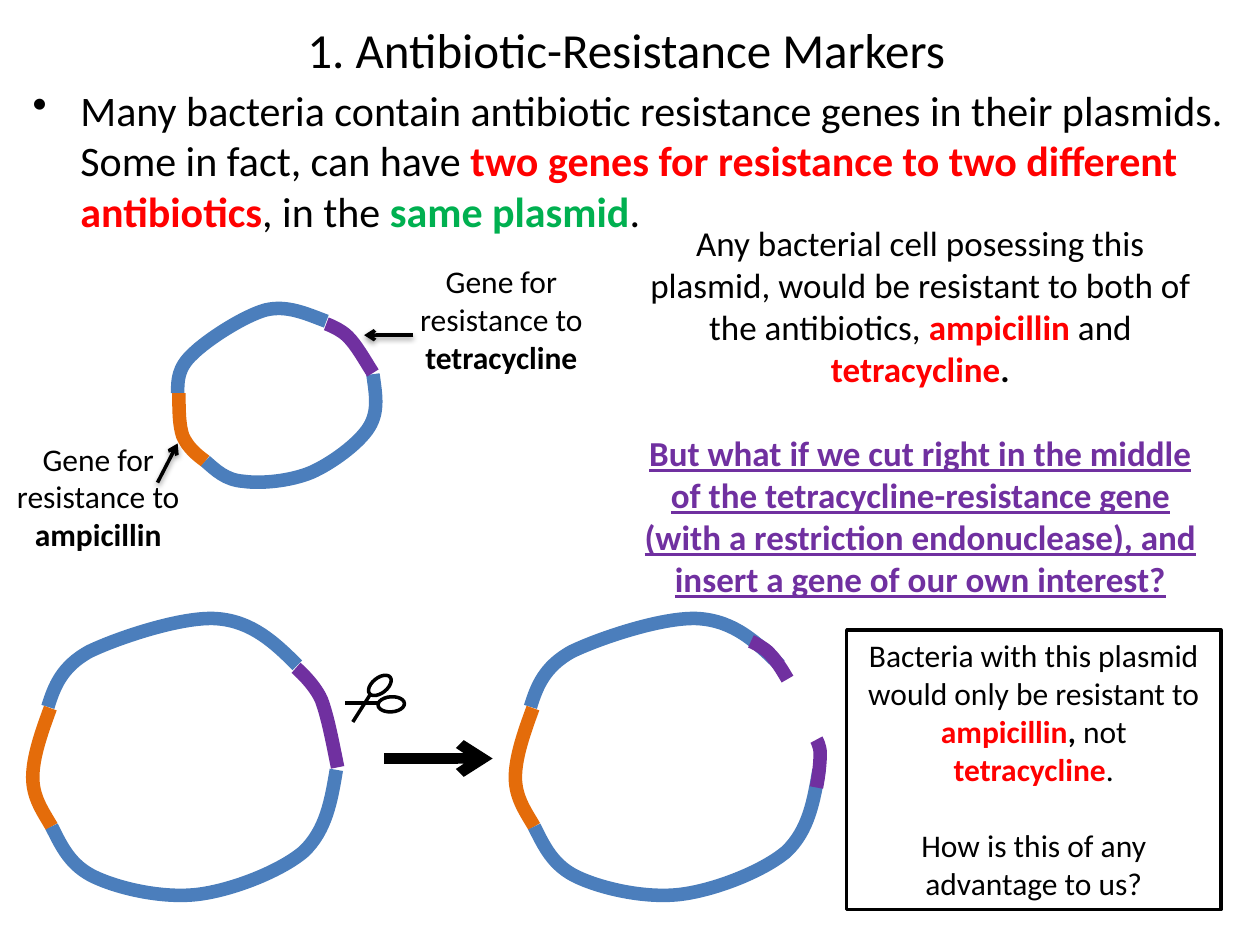
import pptx
import pptx.dml.color
import pptx.enum.shapes
import pptx.enum.text
import pptx.oxml
import pptx.oxml.ns
import pptx.util
from lxml import etree
from pptx.util import Inches

BLACK, WHITE, RED, GREEN = "000000", "FFFFFF", "FF0000", "00B050"
BLUE, ORANGE, PURPLE = "4B7EBC", "E46C0A", "7030A0"
color = pptx.dml.color.RGBColor.from_string
qn = pptx.oxml.ns.qn
CENTER = pptx.enum.text.PP_ALIGN.CENTER
STRAIGHT = pptx.enum.shapes.MSO_CONNECTOR.STRAIGHT
SHAPE = pptx.enum.shapes.MSO_SHAPE


def write_text(shape, size, paragraphs, gap=0, align=CENTER):
    """Fill a shape with paragraphs of (text, colour, bold) runs; gap is in points."""
    frame = shape.text_frame
    frame.word_wrap = True
    for index, runs in enumerate(paragraphs):
        paragraph = frame.add_paragraph() if index else frame.paragraphs[0]
        paragraph.alignment = align
        paragraph.space_before = pptx.util.Pt(gap if index else 0)
        paragraph.font.name = "Calibri"
        paragraph.font.size = pptx.util.Pt(size)
        for text, run_color, bold in runs:
            run = paragraph.add_run()
            run.text = text
            run.font.color.rgb = color(run_color)
            run.font.bold = bold
    return frame


def draw_arc(shapes, line_color, points, shift=0):
    """Draw a start point followed by triples of Bezier points, moved right by shift."""
    points = [(Inches(x + shift), Inches(y)) for x, y in points]
    builder = shapes.build_freeform(*points[0])
    builder.add_line_segments(points[1:], close=False)
    arc = builder.convert_to_shape()
    arc.shadow.inherit = False
    arc.fill.background()
    arc.line.color.rgb = color(line_color)
    arc.line.width = pptx.util.Pt(7.75)
    outline = arc._element.find(".//" + qn("a:path"))
    segments = outline.findall(qn("a:lnTo"))
    for first in range(0, len(segments), 3):
        curve = etree.SubElement(outline, qn("a:cubicBezTo"))
        for segment in segments[first:first + 3]:
            curve.append(segment[0])
            outline.remove(segment)


presentation = pptx.Presentation()
presentation.slide_width = Inches(10)
presentation.slide_height = Inches(7.5)
slide = presentation.slides.add_slide(presentation.slide_layouts[6])
shapes = slide.shapes

# Title and bullet
title = shapes.add_textbox(Inches(0.47), Inches(0.23), Inches(9), Inches(0.32))
frame = write_text(title, 28, [[("1. Antibiotic-Resistance Markers", BLACK, False)]])
frame.vertical_anchor = pptx.enum.text.MSO_ANCHOR.MIDDLE

body = shapes.add_textbox(Inches(0.16), Inches(0.62), Inches(9.69), Inches(6.88))
frame = write_text(body, 24, [[
    ("Many bacteria contain antibiotic resistance genes in their plasmids. "
     "Some in fact, can have ", BLACK, False),
    ("two genes for resistance to two different antibiotics", RED, True),
    (", in the ", BLACK, False),
    ("same plasmid", GREEN, True),
    (".", BLACK, False),
]], align=pptx.enum.text.PP_ALIGN.LEFT)
properties = frame.paragraphs[0]._p.get_or_add_pPr()
properties.set("marL", str(Inches(0.38)))
properties.set("indent", str(Inches(-0.38)))
bullet = pptx.oxml.parse_xml(
    f'<a:buChar {pptx.oxml.ns.nsdecls("a")} char="•"/>')
properties.find(qn("a:defRPr")).addprevious(bullet)

# Small plasmid with both resistance genes
small_plasmid = [
    (BLUE, [(2.59, 2.55), (2.43, 2.49), (2.28, 2.42), (2.11, 2.46),
            (1.93, 2.51), (1.64, 2.7), (1.53, 2.81),
            (1.41, 2.92), (1.41, 3.02), (1.41, 3.12)]),
    (ORANGE, [(1.42, 3.12), (1.42, 3.25), (1.42, 3.37), (1.45, 3.46),
              (1.49, 3.55), (1.56, 3.61), (1.63, 3.66)]),
    (BLUE, [(1.63, 3.66), (1.71, 3.73), (1.79, 3.81), (1.93, 3.82),
            (2.07, 3.84), (2.3, 3.82), (2.47, 3.75),
            (2.63, 3.68), (2.85, 3.52), (2.93, 3.39),
            (3.01, 3.26), (2.98, 3.12), (2.96, 2.97)]),
    (PURPLE, [(2.96, 2.96), (2.89, 2.85), (2.83, 2.74), (2.76, 2.67),
              (2.7, 2.61), (2.59, 2.57), (2.59, 2.57)]),
]
for arc_color, points in small_plasmid:
    draw_arc(shapes, arc_color, points)

for left, top, antibiotic in [(0, 3.44, "ampicillin"), (3.2, 2.03, "tetracycline")]:
    label = shapes.add_textbox(Inches(left), Inches(top), Inches(1.56), Inches(1.01))
    write_text(label, 18, [[("Gene for resistance to ", BLACK, False),
                            (antibiotic, BLACK, True)]])

# Explanation and question
explanation = shapes.add_textbox(Inches(4.92), Inches(1.71), Inches(4.77), Inches(3.13))
frame = write_text(explanation, 20, [
    [("Any bacterial cell posessing this plasmid, would be resistant to both "
      "of the antibiotics, ", BLACK, False),
     ("ampicillin", RED, True), (" and ", BLACK, False),
     ("tetracycline", RED, True), (".", BLACK, True)],
    [("But what if we cut right in the middle of the tetracycline-resistance gene "
      "(with a restriction endonuclease), and insert a gene of our own interest?",
      PURPLE, True)],
], gap=24)
frame.paragraphs[1].font.underline = True

# Large plasmid, whole on the left and cut on the right
large_plasmid = [
    (BLUE, [(2.36, 5.28), (2.18, 5.1), (2, 4.93), (1.72, 4.91),
            (1.45, 4.89), (0.94, 5.06), (0.71, 5.17),
            (0.49, 5.29), (0.43, 5.45), (0.38, 5.61)]),
    (ORANGE, [(0.4, 5.62), (0.33, 5.81), (0.26, 6.01), (0.26, 6.17),
              (0.26, 6.33), (0.34, 6.44), (0.41, 6.56)]),
    (BLUE, [(0.41, 6.56), (0.49, 6.72), (0.56, 6.87), (0.75, 6.96),
            (0.94, 7.05), (1.28, 7.13), (1.56, 7.1),
            (1.83, 7.07), (2.22, 6.92), (2.41, 6.76),
            (2.59, 6.59), (2.63, 6.35), (2.67, 6.11)]),
]
whole_gene = [(2.68, 6.09), (2.64, 5.89), (2.6, 5.68), (2.55, 5.55),
              (2.49, 5.42), (2.35, 5.3), (2.35, 5.3)]
cut_gene = [
    [(6.25, 5.39), (6.21, 5.32), (6.16, 5.24), (6.11, 5.19),
     (6.07, 5.14), (5.96, 5.09), (5.96, 5.09)],
    [(6.48, 6.25), (6.5, 6.15), (6.51, 6.05), (6.51, 5.98),
     (6.51, 5.92), (6.48, 5.87), (6.48, 5.87)],
]
whole_plasmid = shapes.add_group_shape().shapes
for parent, shift in [(whole_plasmid, 0), (shapes, 3.83)]:
    for arc_color, points in large_plasmid:
        draw_arc(parent, arc_color, points, shift)
draw_arc(whole_plasmid, PURPLE, whole_gene)
for points in cut_gene:
    draw_arc(shapes, PURPLE, points)

# Scissor blades and arrows: parent, ends, width, arrowhead, shadow
scissors = shapes.add_group_shape().shapes
lines = [
    (scissors, (2.74, 5.58, 3.03, 5.58), 2, False, False),
    (scissors, (2.8, 5.73, 2.94, 5.51), 2, False, False),
    (shapes, (1.25, 3.83, 1.41, 3.52), 2, True, True),
    (shapes, (3.28, 2.66, 2.89, 2.66), 2, True, True),
    (shapes, (3.05, 6.02, 3.91, 6.02), 6, True, False),
]
for parent, ends, width, has_head, has_shadow in lines:
    connector = parent.add_connector(STRAIGHT, *[Inches(end) for end in ends])
    connector.line.color.rgb = color(BLACK)
    connector.line.width = pptx.util.Pt(width)
    shape_properties = connector._element.spPr
    if has_head:
        etree.SubElement(shape_properties.find(qn("a:ln")), qn("a:tailEnd"), type="arrow")
    effects = etree.SubElement(shape_properties, qn("a:effectLst"))
    if has_shadow:
        shadow = etree.SubElement(effects, qn("a:outerShdw"), blurRad="40000",
                                  dist="20000", dir="5400000", rotWithShape="0")
        shadow_color = etree.SubElement(shadow, qn("a:srgbClr"), val=BLACK)
        etree.SubElement(shadow_color, qn("a:alpha"), val="38000")

# Scissor handles and the conclusion box
outlined = [
    (scissors, SHAPE.OVAL, (2.91, 5.38, 0.21, 0.12), 321.3),
    (scissors, SHAPE.OVAL, (3, 5.53, 0.21, 0.12), 355.9),
    (shapes, SHAPE.RECTANGLE, (6.72, 5, 2.97, 2.22), 0),
]
for parent, kind, box, rotation in outlined:
    shape = parent.add_shape(kind, *[Inches(length) for length in box])
    shape.rotation = rotation
    shape.shadow.inherit = False
    shape.fill.solid()
    shape.fill.fore_color.rgb = color(WHITE)
    shape.line.color.rgb = color(BLACK)
    shape.line.width = pptx.util.Pt(2)

conclusion = shape
frame = write_text(conclusion, 18, [
    [("Bacteria with this plasmid would only be resistant to ", BLACK, False),
     ("ampicillin", RED, True), (", ", BLACK, True), ("not ", BLACK, False),
     ("tetracycline", RED, True), (".", BLACK, False)],
    [("How is this of any advantage to us?", BLACK, False)],
], gap=22)
frame.vertical_anchor = pptx.enum.text.MSO_ANCHOR.TOP

presentation.save("out.pptx")
